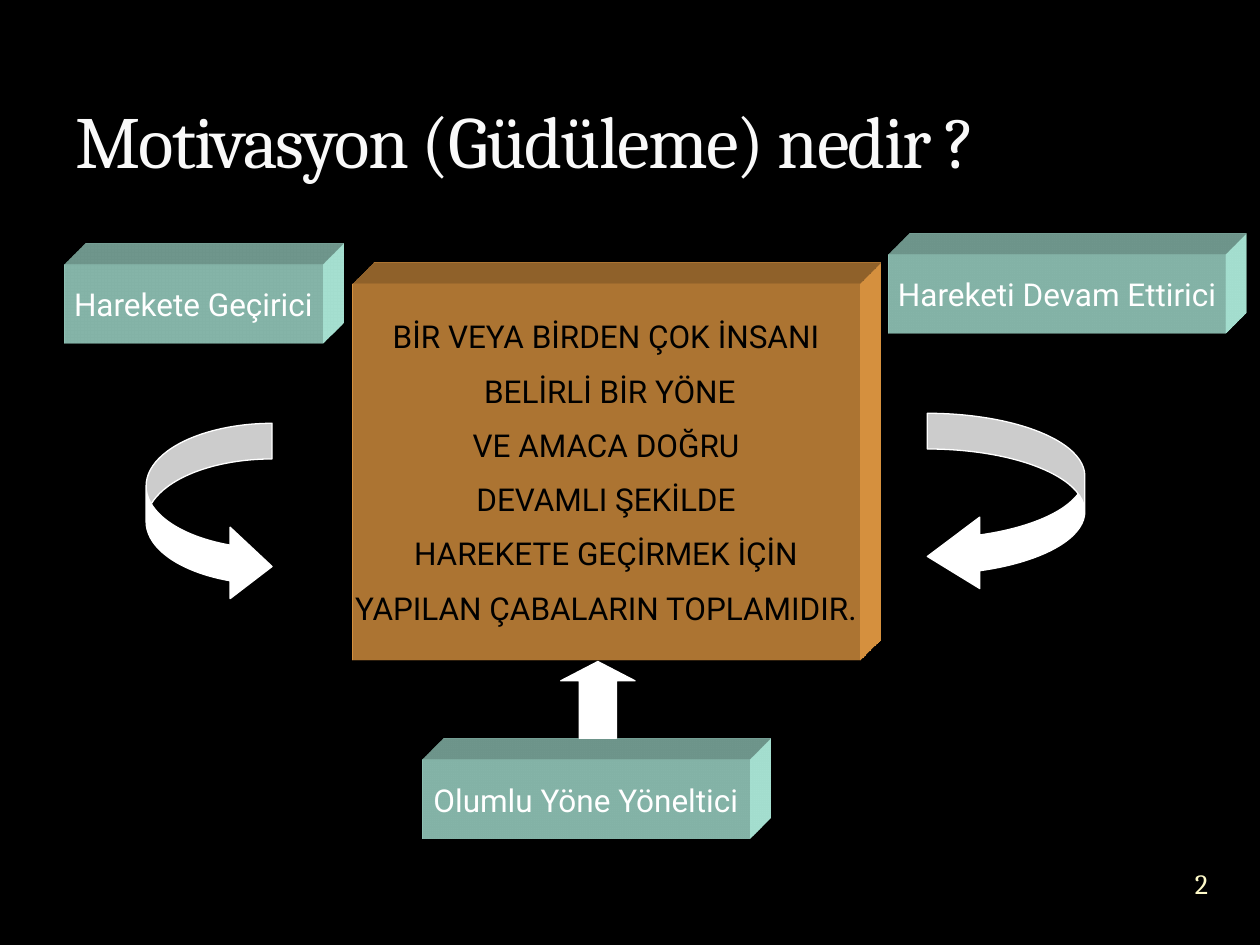
from dataclasses import dataclass

from lxml import etree
from pptx import Presentation
from pptx.dml.color import RGBColor
from pptx.enum import shapes, text
from pptx.oxml import ns
from pptx.util import Inches, Pt


@dataclass(frozen=True)
class Theme:
    background: str = "000000"
    title: str = "F9F9F9"
    number: str = "FEFAC9"
    light: str = "FFFFFF"
    dark: str = "000000"
    mint: str = "BDFFEE"
    orange: str = "F3A447"
    heading_font: str = "Cambria"
    body_font: str = "Roboto"
    title_size: float = 42
    body_size: float = 18
    number_size: float = 16


THEME = Theme()
SHAPE = shapes.MSO_SHAPE
ALIGN = text.PP_ALIGN
ANCHOR = text.MSO_ANCHOR

DEFINITION = [
    "BİR VEYA BİRDEN ÇOK İNSANI",
    " BELİRLİ BİR YÖNE",
    " VE AMACA DOĞRU ",
    "DEVAMLI ŞEKİLDE",
    " HAREKETE GEÇİRMEK İÇİN ",
    "YAPILAN ÇABALARIN TOPLAMIDIR.",
]
FACTORS = [
    ("Harekete Geçirici", (0.51, 2.1, 2.05, 0.63)),
    ("Hareketi Devam Ettirici", (7.05, 2.02, 2.68, 0.63)),
    ("Olumlu Yöne Yöneltici", (3.35, 6.03, 2.6, 0.63)),
]
ARROWS = [
    (SHAPE.CURVED_RIGHT_ARROW, (1.16, 3.36, 1, 1.42), (0.283, 0.567, 0.333)),
    (SHAPE.CURVED_LEFT_ARROW, (7.36, 3.28, 1.25, 1.42), (0.227, 0.454, 0.333)),
    (SHAPE.UP_ARROW, (4.45, 5.25, 0.59, 0.61), (0.5, 0.26)),
]


def inches(box):
    return [Inches(v) for v in box]


def write(sp, lines, *, color, size=THEME.body_size, font=THEME.body_font,
          align=ALIGN.CENTER, anchor=ANCHOR.MIDDLE, wrap=True, before=0,
          tracking=0, margin=None):
    tf = sp.text_frame
    tf.word_wrap = wrap
    tf.vertical_anchor = anchor
    if margin is not None:
        tf.margin_left = tf.margin_right = Inches(margin)
        tf.margin_top = tf.margin_bottom = Inches(margin)
    for i, line in enumerate(lines):
        p = tf.add_paragraph() if i else tf.paragraphs[0]
        p.alignment = align
        p.space_before = Pt(before)
        r = p.add_run()
        r.text = line
        r.font.name = font
        r.font.size = Pt(size)
        r.font.color.rgb = RGBColor.from_string(color)
        if tracking:
            r.font._element.set("spc", str(int(tracking * 100)))


def extrude(sp, color):
    """Give the shape an oblique depth towards the top right."""
    xml = f"""<root {ns.nsdecls('a')}>
      <a:scene3d><a:camera prst="legacyObliqueTopRight"/>
        <a:lightRig rig="legacyFlat3" dir="b"/></a:scene3d>
      <a:sp3d extrusionH="430200" prstMaterial="legacyMatte">
        <a:bevelT w="13500" h="13500" prst="angle"/>
        <a:bevelB w="13500" h="13500" prst="angle"/>
        <a:extrusionClr><a:srgbClr val="{color}"/></a:extrusionClr>
      </a:sp3d></root>"""
    sp._element.spPr.extend(list(etree.fromstring(xml)))


def add_block(s, box, lines, fill, color, before=0):
    sp = s.shapes.add_shape(SHAPE.RECTANGLE, *inches(box))
    sp.shadow.inherit = False
    sp.fill.solid()
    sp.fill.fore_color.rgb = RGBColor.from_string(fill)
    sp.line.fill.background()
    extrude(sp, fill)
    write(sp, lines, color=color, wrap=False, before=before)


def add_arrow(s, kind, box, adjustments):
    sp = s.shapes.add_shape(kind, *inches(box))
    sp.shadow.inherit = False
    for i, value in enumerate(adjustments):
        sp.adjustments[i] = value
    sp.fill.solid()
    sp.fill.fore_color.rgb = RGBColor.from_string(THEME.light)
    sp.line.color.rgb = RGBColor.from_string(THEME.light)
    sp.line.width = Pt(0.75)


def add_title(s, box):
    write(s.shapes.add_textbox(*inches(box)), ["Motivasyon (Güdüleme) nedir ?"],
          color=THEME.title, size=THEME.title_size, font=THEME.heading_font,
          align=ALIGN.LEFT, anchor=ANCHOR.BOTTOM, tracking=-1)


def add_number(s, box):
    write(s.shapes.add_textbox(*inches(box)), ["2"], color=THEME.number,
          size=THEME.number_size, font=THEME.heading_font, margin=0)


def main():
    prs = Presentation()
    prs.slide_width, prs.slide_height = Inches(10), Inches(7.5)
    s = prs.slides.add_slide(prs.slide_layouts[6])
    s.background.fill.solid()
    s.background.fill.fore_color.rgb = RGBColor.from_string(THEME.background)

    add_number(s, (9.2, 6.76, 0.67, 0.5))
    add_title(s, (0.5, 0.17, 9, 1.33))
    for label, box in FACTORS:
        add_block(s, box, [label], THEME.mint, THEME.light)
    add_block(s, (2.8, 2.25, 4.02, 2.99), DEFINITION, THEME.orange,
              THEME.dark, before=9.4)
    for kind, box, adjustments in ARROWS:
        add_arrow(s, kind, box, adjustments)
    prs.save("out.pptx")


if __name__ == "__main__":
    main()
